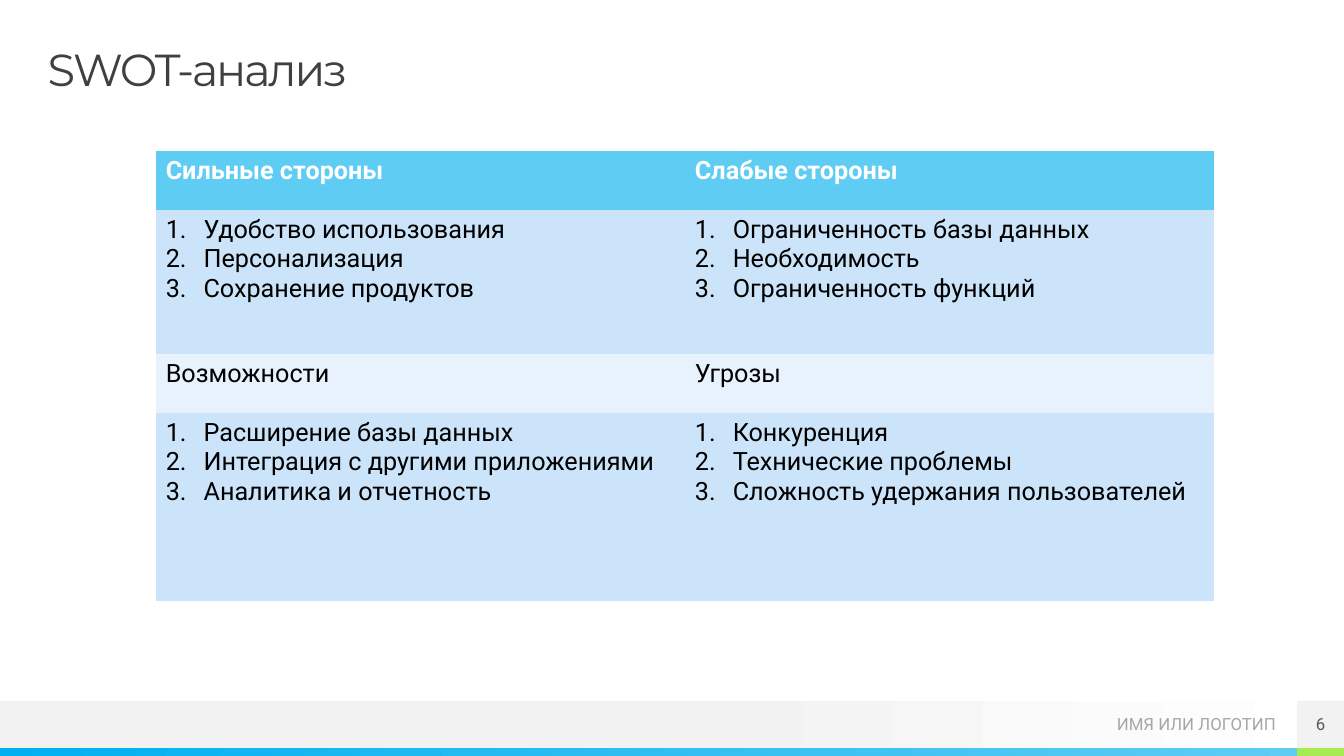
from pptx import Presentation
from pptx.dml.color import RGBColor
from pptx.enum import shapes, text
from pptx.oxml.ns import qn
from pptx.util import Pt

TITLE = "SWOT-анализ"
FOOTER = "ИМЯ ИЛИ ЛОГОТИП"
PAGE_NUMBER = "6"
SWOT = [
    ("Сильные стороны",
     ["Удобство использования", "Персонализация", "Сохранение продуктов"]),
    ("Слабые стороны",
     ["Ограниченность базы данных", "Необходимость", "Ограниченность функций"]),
    ("Возможности",
     ["Расширение базы данных", "Интеграция с другими приложениями",
      "Аналитика и отчетность"]),
    ("Угрозы",
     ["Конкуренция", "Технические проблемы", "Сложность удержания пользователей"]),
]

WHITE = RGBColor(0xFF, 0xFF, 0xFF)
BLACK = RGBColor(0x00, 0x00, 0x00)
TITLE_GRAY = RGBColor(0x40, 0x40, 0x40)
NUMBER_GRAY = RGBColor(0x59, 0x59, 0x59)
FOOTER_GRAY = RGBColor(0xA6, 0xA6, 0xA6)
PALE_GRAY = RGBColor(0xF2, 0xF2, 0xF2)
BLUE = RGBColor(0x00, 0xB0, 0xF0)
SKY = RGBColor(0x5E, 0xCC, 0xF3)
GREEN = RGBColor(0xA7, 0xEA, 0x52)
LIST_FILL = RGBColor(0xCC, 0xE4, 0xF9)
HEADING_FILL = RGBColor(0xE7, 0xF2, 0xFC)

WIDTH, HEIGHT = 960, 540
STRIP_HEIGHT = 6
CORNER = 33.4
STRIP_TOP = HEIGHT - STRIP_HEIGHT
FOOTER_TOP = STRIP_TOP - CORNER
CORNER_LEFT = WIDTH - CORNER
TABLE_LEFT, TABLE_TOP, COLUMN_WIDTH = 111.2, 108, 378
ROW_HEIGHTS = [42, 103, 42, 134.4]
LIST_INDENT = 27
NO_STYLE = "{2D5ABB26-0587-4C30-8999-92F81FD0307C}"


def write(frame, lines, size=18, font="Roboto", color=BLACK, bold=False, align=None,
          anchor=None, margin=None, line_spacing=None, tracking=None, numbered=False):
    """Fill a text frame with one paragraph per line, all in one format."""
    frame.word_wrap = True
    if anchor is not None:
        frame.vertical_anchor = anchor
    if margin is not None:
        frame.margin_left = frame.margin_right = Pt(margin)
        frame.margin_top = frame.margin_bottom = Pt(margin)
    for index, line in enumerate(lines):
        paragraph = frame.add_paragraph() if index else frame.paragraphs[0]
        paragraph.alignment = align
        paragraph.line_spacing = line_spacing
        run = paragraph.add_run()
        run.text = line
        run.font.size, run.font.name = Pt(size), font
        run.font.bold, run.font.color.rgb = bold, color
        if tracking is not None:
            run.font._element.set("spc", str(int(tracking * 100)))
        if numbered:
            properties = paragraph._p.get_or_add_pPr()
            properties.set("marL", str(Pt(LIST_INDENT)))
            properties.set("indent", str(-Pt(LIST_INDENT)))
            number = properties.makeelement(qn("a:buAutoNum"), {"type": "arabicPeriod"})
            properties.append(number)


def add_bar(slide, left, top, width, height, *stops):
    """Add a rectangle filled with one colour, or with two (position, colour) stops."""
    bar = slide.shapes.add_shape(
        shapes.MSO_SHAPE.RECTANGLE, Pt(left), Pt(top), Pt(width), Pt(height))
    bar.shadow.inherit = False
    bar.line.fill.background()
    if len(stops) == 1:
        bar.fill.solid()
        bar.fill.fore_color.rgb = stops[0]
    else:
        bar.fill.gradient()
        bar.fill.gradient_angle = 0
        for stop, (position, color) in zip(bar.fill.gradient_stops, stops):
            stop.position, stop.color.rgb = position, color
    return bar


def add_text(slide, left, top, width, height, line, **form):
    box = slide.shapes.add_textbox(Pt(left), Pt(top), Pt(width), Pt(height))
    write(box.text_frame, [line], margin=0, **form)


def add_swot_table(slide):
    table = slide.shapes.add_table(
        len(ROW_HEIGHTS), 2, Pt(TABLE_LEFT), Pt(TABLE_TOP),
        Pt(2 * COLUMN_WIDTH), Pt(sum(ROW_HEIGHTS))).table
    table._tbl.tblPr.find(qn("a:tableStyleId")).text = NO_STYLE
    for column in table.columns:
        column.width = Pt(COLUMN_WIDTH)
    for row, height in zip(table.rows, ROW_HEIGHTS):
        row.height = Pt(height)
    for index, (heading, items) in enumerate(SWOT):
        pair, column = divmod(index, 2)
        first = pair == 0
        heading_cell = table.cell(2 * pair, column)
        list_cell = table.cell(2 * pair + 1, column)
        for cell, fill in ((heading_cell, SKY if first else HEADING_FILL),
                           (list_cell, LIST_FILL)):
            cell.fill.solid()
            cell.fill.fore_color.rgb = fill
        write(heading_cell.text_frame, [heading], bold=first,
              color=WHITE if first else BLACK)
        write(list_cell.text_frame, items, numbered=True)


def main():
    presentation = Presentation()
    presentation.slide_width, presentation.slide_height = Pt(WIDTH), Pt(HEIGHT)
    slide = presentation.slides.add_slide(presentation.slide_layouts[6])

    add_bar(slide, 0, FOOTER_TOP, WIDTH, CORNER, (0.53, PALE_GRAY), (1, WHITE))
    add_bar(slide, 0, STRIP_TOP, CORNER_LEFT, STRIP_HEIGHT, (0, BLUE), (1, SKY))
    add_bar(slide, CORNER_LEFT, STRIP_TOP, CORNER, STRIP_HEIGHT, GREEN)
    add_text(slide, 750, FOOTER_TOP, 161.5, CORNER, FOOTER, size=12, color=FOOTER_GRAY,
             align=text.PP_ALIGN.RIGHT, anchor=text.MSO_ANCHOR.MIDDLE)
    add_text(slide, 34, 34, 892.6, 34, TITLE, size=32, font="Montserrat",
             color=TITLE_GRAY, line_spacing=0.9, tracking=-1.5)
    number_box = add_bar(slide, CORNER_LEFT, FOOTER_TOP, CORNER, CORNER, PALE_GRAY)
    write(number_box.text_frame, [PAGE_NUMBER], size=12, color=NUMBER_GRAY, margin=0,
          align=text.PP_ALIGN.CENTER, anchor=text.MSO_ANCHOR.MIDDLE)
    add_swot_table(slide)

    presentation.save("out.pptx")


if __name__ == "__main__":
    main()
